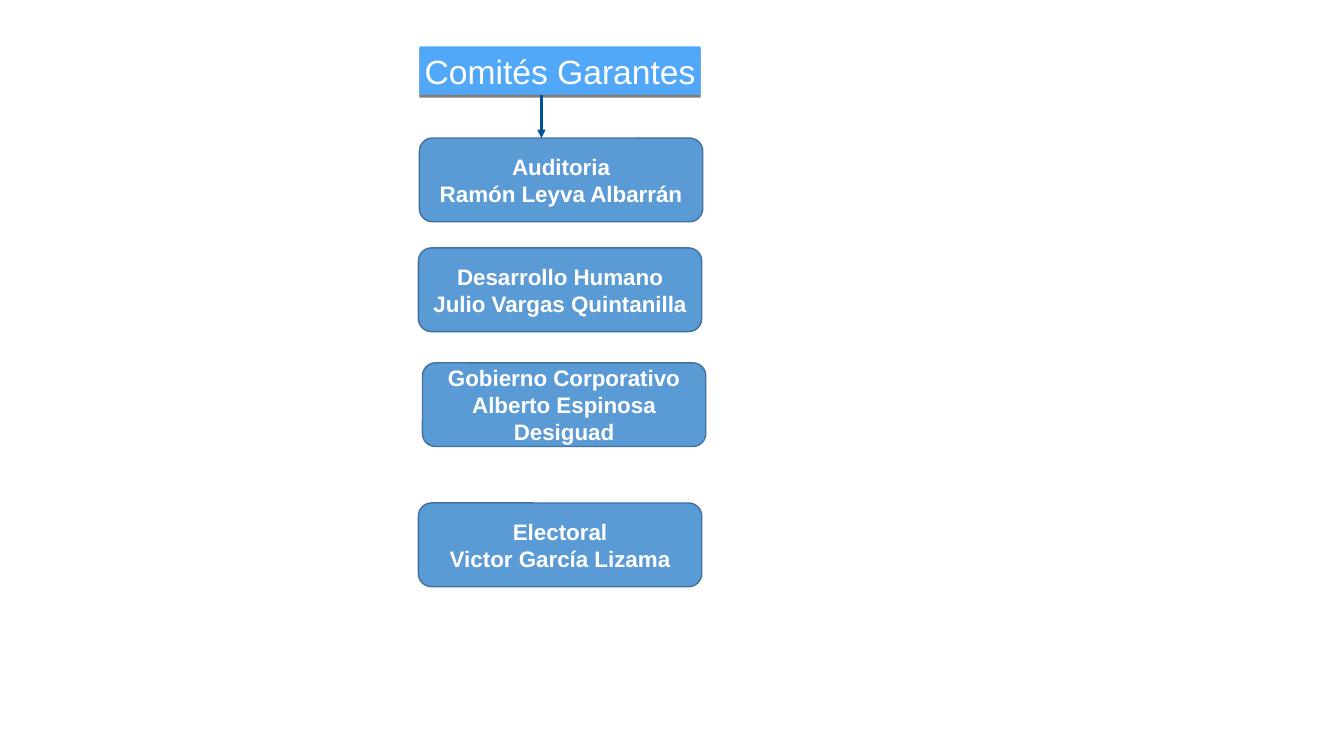
from lxml import etree
from pptx import Presentation
from pptx.dml.color import RGBColor
from pptx.enum import shapes, text
from pptx.oxml import ns
from pptx.util import Inches, Pt

TITLE = "Comités Garantes"
BOARDS = [  # left, top, label height, lines
    (4.16, 1.37, 0.61, ("Auditoria", "Ramón Leyva Albarrán")),
    (4.15, 2.46, 0.61, ("Desarrollo Humano", "Julio Vargas Quintanilla")),
    (4.19, 3.6, 0.88, ("Gobierno Corporativo", "Alberto Espinosa Desiguad")),
    (4.15, 4.99, 0.61, ("Electoral", "Victor García Lizama")),
]
COLORS = {"title": "51A8F9", "box": "5B9BD5", "edge": "42719B",
          "arrow": "005493", "text": "FFFFFF", "shade": "000000"}
BOX_W, BOX_H, LABEL_W = 2.81, 0.83, 2.73
ARROW_X = 5.37


def color(name):
    return RGBColor.from_string(COLORS[name])


def add_tag(parent, tag, **attrs):
    return etree.SubElement(parent, ns.qn(tag), attrs)


def add_box(home, kind, area, fill):
    box = home.add_shape(kind, *map(Inches, area))
    box.shadow.inherit = False
    box.fill.solid()
    box.fill.fore_color.rgb = color(fill)
    return box


def write(shape, lines, size, bold=False, wrap=True):
    frame = shape.text_frame
    frame.word_wrap = wrap
    frame.vertical_anchor = text.MSO_ANCHOR.MIDDLE
    frame.margin_left = frame.margin_right = Inches(0.04)
    frame.margin_top = frame.margin_bottom = Inches(0.04)
    for i, line in enumerate(lines):
        para = frame.add_paragraph() if i else frame.paragraphs[0]
        para.alignment = text.PP_ALIGN.CENTER
        run = para.add_run()
        run.text = line
        run.font.name = "Arial"
        run.font.size = Pt(size)
        run.font.bold = bold
        run.font.color.rgb = color("text")


def add_title(slide):
    title = add_box(slide.shapes, shapes.MSO_SHAPE.RECTANGLE,
                    (4.16, 0.46, 2.79, 0.48), "title")
    title.line.fill.background()
    write(title, [TITLE], 24, wrap=False)
    effects = title.element.spPr.find(ns.qn("a:effectLst"))
    shadow = add_tag(effects, "a:outerShdw", blurRad="0", dist=str(Pt(2)),
                     dir="5400000", rotWithShape="0")
    shade = add_tag(shadow, "a:srgbClr", val=COLORS["shade"])
    add_tag(shade, "a:alpha", val="50000")


def add_board(slide, left, top, height, lines):
    group = slide.shapes.add_group_shape().shapes
    box = add_box(group, shapes.MSO_SHAPE.ROUNDED_RECTANGLE,
                  (left, top, BOX_W, BOX_H), "box")
    box.adjustments[0] = 0.155
    box.line.color.rgb = color("edge")
    box.line.width = Pt(1)
    area = (left + (BOX_W - LABEL_W) / 2, top + (BOX_H - height) / 2,
            LABEL_W, height)
    write(group.add_textbox(*map(Inches, area)), lines, 16, bold=True)


def add_arrow(slide):
    ends = map(Inches, (ARROW_X, 0.94, ARROW_X, BOARDS[0][1]))
    arrow = slide.shapes.add_connector(shapes.MSO_CONNECTOR.STRAIGHT, *ends)
    arrow.line.color.rgb = color("arrow")
    arrow.line.width = Pt(2)
    add_tag(arrow.line._get_or_add_ln(), "a:tailEnd", type="triangle")
    add_tag(arrow.element.spPr, "a:effectLst")


def main():
    deck = Presentation()
    deck.slide_width, deck.slide_height = Inches(13.33), Inches(7.5)
    slide = deck.slides.add_slide(deck.slide_layouts[6])
    add_title(slide)
    for board in BOARDS:
        add_board(slide, *board)
    add_arrow(slide)
    deck.save("out.pptx")


if __name__ == "__main__":
    main()
